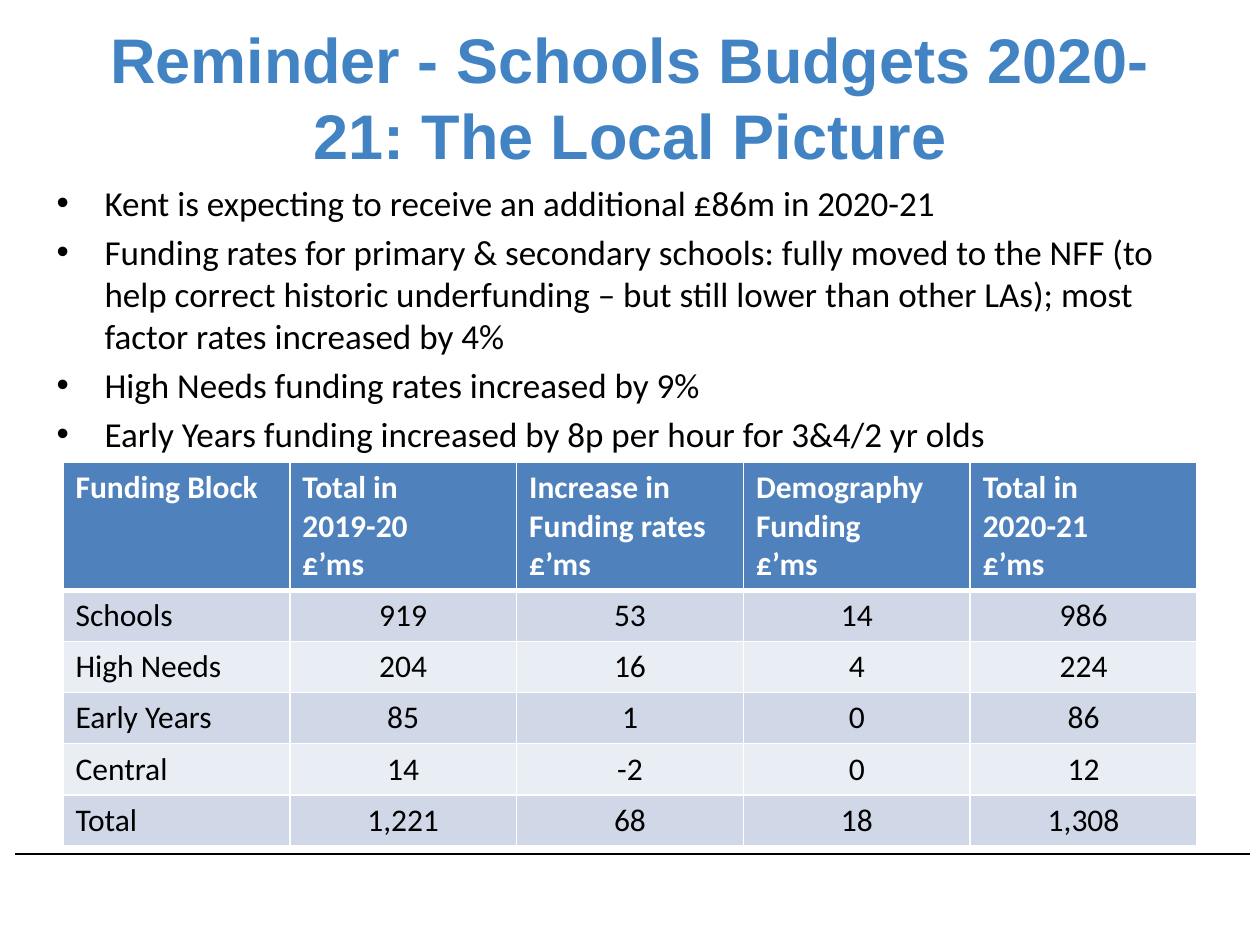
from dataclasses import dataclass

from lxml import etree
from pptx import Presentation
from pptx.dml.color import RGBColor
from pptx.enum.shapes import MSO_CONNECTOR
from pptx.enum.text import MSO_ANCHOR, MSO_AUTO_SIZE, PP_ALIGN
from pptx.oxml.ns import qn
from pptx.util import Inches, Pt

LEFT, CENTER = PP_ALIGN.LEFT, PP_ALIGN.CENTER
MIDDLE, TOP = MSO_ANCHOR.MIDDLE, MSO_ANCHOR.TOP
NO_FIT = MSO_AUTO_SIZE.NONE
STRAIGHT = MSO_CONNECTOR.STRAIGHT


@dataclass(frozen=True)
class Theme:
    """Colours, fonts and type sizes of the slide."""
    title_color: str = "4283C4"
    text_color: str = "000000"
    light: str = "FFFFFF"
    header_fill: str = "4F81BD"
    band_fills: tuple = ("D0D8E8", "E9EDF4")
    title_font: str = "Arial"
    body_font: str = "Calibri"
    title_size: int = 36
    body_size: int = 20
    table_size: int = 18


@dataclass(frozen=True)
class Box:
    """A region of the slide in inches."""
    left: float
    top: float
    width: float
    height: float

    def lengths(self):
        """Return the region as slide lengths."""
        return [Inches(value) for value in (self.left, self.top, self.width, self.height)]


THEME = Theme()
SLIDE = Box(0, 0, 10, 7.5)
TITLE = "Reminder - Schools Budgets 2020-21: The Local Picture"
BULLETS = (
    "Kent is expecting to receive an additional £86m in 2020-21",
    "Funding rates for primary & secondary schools: fully moved to the NFF (to help correct "
    "historic underfunding – but still lower than other LAs); most factor rates increased by 4%",
    "High Needs funding rates increased by 9%",
    "Early Years funding increased by 8p per hour for 3&4/2 yr olds",
)
FUNDING = (
    ("Funding Block", "Total in\n2019-20\n£’ms", "Increase in Funding rates £’ms",
     "Demography Funding\n£’ms", "Total in\n2020-21\n£’ms"),
    ("Schools", "919", "53", "14", "986"),
    ("High Needs", "204", "16", "4", "224"),
    ("Early Years", "85", "1", "0", "86"),
    ("Central", "14", "-2", "0", "12"),
    ("Total", "1,221", "68", "18", "1,308"),
)


def color(value):
    """Turn a hex string into a colour."""
    return RGBColor.from_string(value)


def add_bullet(paragraph, indent):
    """Give a paragraph a round bullet with a hanging indent."""
    properties = paragraph._p.get_or_add_pPr()
    properties.set("marL", str(Inches(indent)))
    properties.set("indent", str(-Inches(indent)))
    etree.SubElement(properties, qn("a:buFont"), typeface="Arial")
    etree.SubElement(properties, qn("a:buChar"), char="•")


def write_text(frame, text, *, size, font, fill, bold=False, align=LEFT,
               gap=0, bullet_indent=None):
    """Fill a text frame with one formatted paragraph for each line of text."""
    frame.word_wrap = True
    for index, line in enumerate(text.split("\n")):
        paragraph = frame.add_paragraph() if index else frame.paragraphs[0]
        paragraph.alignment = align
        paragraph.space_before = Pt(gap if index else 0)
        if bullet_indent:
            add_bullet(paragraph, bullet_indent)
        run = paragraph.add_run()
        run.text = line
        run.font.size, run.font.name, run.font.bold = Pt(size), font, bold
        run.font.color.rgb = color(fill)


def place(shape, box, anchor):
    """Move a placeholder into a box and fix its text fitting."""
    shape.left, shape.top, shape.width, shape.height = box.lengths()
    shape.text_frame.auto_size = NO_FIT
    shape.text_frame.vertical_anchor = anchor


def build_title(slide, box):
    """Write the slide title in its placeholder."""
    title = slide.shapes.title
    place(title, box, MIDDLE)
    write_text(title.text_frame, TITLE, size=THEME.title_size, font=THEME.title_font,
               fill=THEME.title_color, bold=True, align=CENTER)


def build_bullets(slide, box):
    """Write the bullet list in the body placeholder."""
    body = slide.placeholders[1]
    place(body, box, TOP)
    write_text(body.text_frame, "\n".join(BULLETS), size=THEME.body_size,
               font=THEME.body_font, fill=THEME.text_color,
               gap=THEME.body_size * 0.2, bullet_indent=0.38)


def set_borders(cell, bottom_width):
    """Draw light rules round a cell, ahead of its fill."""
    properties = cell._tc.get_or_add_tcPr()
    widths = {"a:lnL": 1, "a:lnR": 1, "a:lnT": 1, "a:lnB": bottom_width}
    for position, (side, width) in enumerate(widths.items()):
        line = etree.Element(qn(side), w=str(Pt(width)))
        fill = etree.SubElement(line, qn("a:solidFill"))
        etree.SubElement(fill, qn("a:srgbClr"), val=THEME.light)
        properties.insert(position, line)


def build_table(slide, box):
    """Add the funding table with a tall header and banded rows."""
    rows, columns = len(FUNDING), len(FUNDING[0])
    table = slide.shapes.add_table(rows, columns, *box.lengths()).table
    header_height = box.height / 3
    row_height = (box.height - header_height) / (rows - 1)
    for row_index, values in enumerate(FUNDING):
        header = row_index == 0
        table.rows[row_index].height = Inches(header_height if header else row_height)
        band = THEME.band_fills[(row_index - 1) % 2]
        for column_index, value in enumerate(values):
            cell = table.cell(row_index, column_index)
            cell.fill.solid()
            cell.fill.fore_color.rgb = color(THEME.header_fill if header else band)
            set_borders(cell, 3 if header else 1)
            write_text(cell.text_frame, value, size=THEME.table_size, font=THEME.body_font,
                       fill=THEME.light if header else THEME.text_color, bold=header,
                       align=LEFT if header or column_index == 0 else CENTER)


def build_footer_rule(slide, box):
    """Draw the rule along the top of the footer."""
    left, top, width, _ = box.lengths()
    rule = slide.shapes.add_connector(STRAIGHT, left, top, left + width, top)
    rule.line.color.rgb = color(THEME.text_color)
    rule.line.width = Pt(1)
    etree.SubElement(rule._element.spPr, qn("a:effectLst"))


def main():
    """Build and save the presentation."""
    presentation = Presentation()
    presentation.slide_width, presentation.slide_height = SLIDE.lengths()[2:]
    slide = presentation.slides.add_slide(presentation.slide_layouts[1])
    margin = SLIDE.width * 0.05
    content_width = SLIDE.width - 2 * margin
    build_footer_rule(slide, Box(0.12, 6.78, 9.8, 0))
    build_title(slide, Box(margin, 0.14, content_width, 1.25))
    build_bullets(slide, Box(0.35, 1.39, 9.29, 5.5))
    build_table(slide, Box(margin, 3.67, content_width, 3.03))
    presentation.save("out.pptx")


if __name__ == "__main__":
    main()
